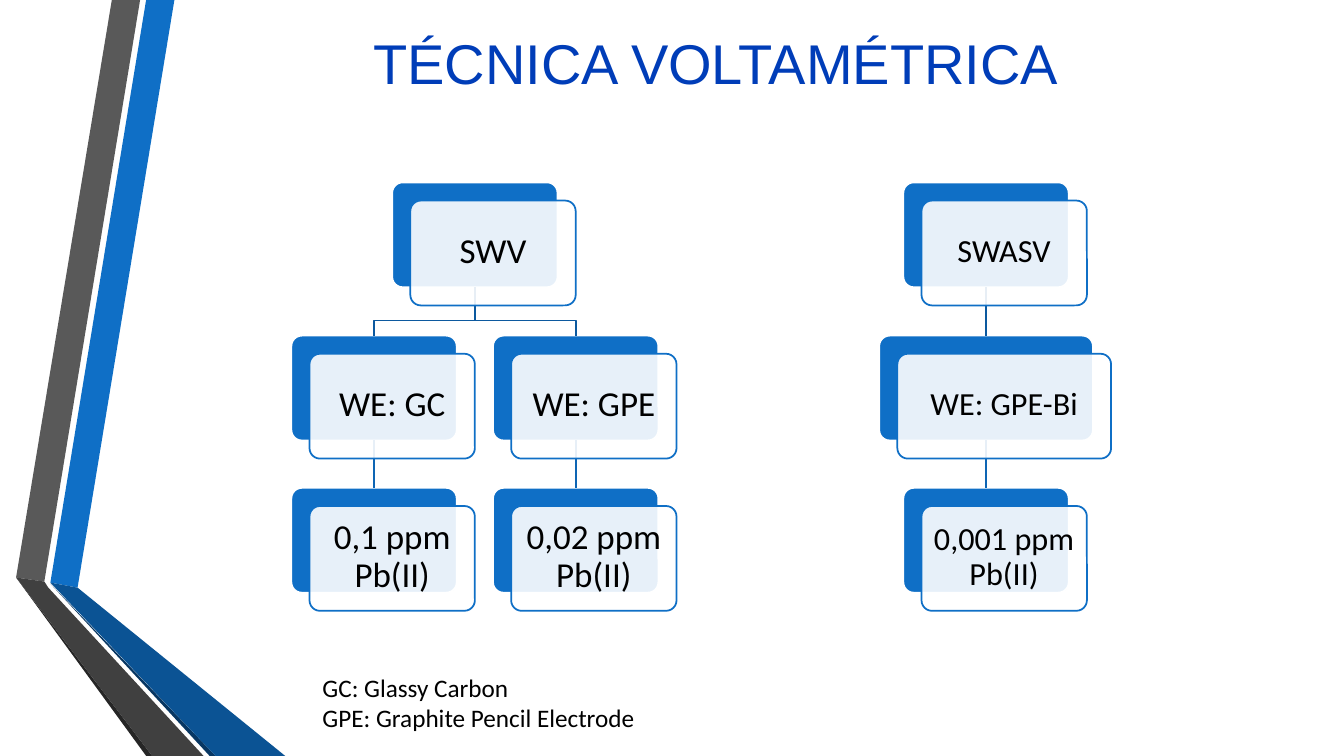
from dataclasses import dataclass
from typing import Any, NamedTuple, Optional

from lxml import etree
from pptx import Presentation
from pptx import util as u
from pptx.dml import color as dml
from pptx.enum import shapes, text
from pptx.oxml import ns

Point = tuple[float, float]


@dataclass(frozen=True)
class Theme:
    blue: str = "0F6FC6"
    title_blue: str = "003DB8"
    upper_link: str = "0C599F"
    lower_link: str = "0E65B4"
    white: str = "FFFFFF"
    black: str = "000000"
    title_font: str = "Arial"
    body_font: str = "Calibri"
    title_size: int = 40
    left_tree_size: int = 25
    right_tree_size: int = 23
    legend_size: int = 18
    line_width: float = 1.25


class Ribbon(NamedTuple):
    color: str
    outline: list[Point]


class Card(NamedTuple):
    label: str
    center: float
    row: int
    size: int
    parent: Optional[str] = None
    width: float = 1.64


THEME = Theme()
ROW_TOPS = (1.81, 3.33, 4.84)
CARD_HEIGHT = 1.04
FRONT_OFFSET = 0.18
BEND_Y = 3.18

RIBBONS = [
    Ribbon(THEME.blue, [(0.5, 5.78), (0.77, 5.83), (1.73, 0), (1.45, 0)]),
    Ribbon("595959", [(1.39, 0), (1.11, 0), (0.16, 5.73), (0.44, 5.77)]),
    Ribbon("262626", [(0.16, 5.73), (1.45, 7.5), (1.51, 7.5)]),
    Ribbon("083763", [(0.5, 5.79), (2.08, 7.5), (2.14, 7.5)]),
    Ribbon("0B5394", [(0.5, 5.78), (2.14, 7.5), (2.83, 7.5), (0.77, 5.83)]),
    Ribbon("404040", [(2.02, 7.5), (0.48, 5.83), (0.44, 5.77), (0.16, 5.73), (1.51, 7.5)]),
]

LEFT, RIGHT = THEME.left_tree_size, THEME.right_tree_size
CARDS = [
    Card("SWV", 4.71, 0, LEFT),
    Card("WE: GC", 3.71, 1, LEFT, "SWV"),
    Card("0,1 ppm Pb(II)", 3.71, 2, LEFT, "WE: GC"),
    Card("WE: GPE", 5.71, 1, LEFT, "SWV"),
    Card("0,02 ppm Pb(II)", 5.71, 2, LEFT, "WE: GPE"),
    Card("SWASV", 9.78, 0, RIGHT),
    Card("WE: GPE-Bi", 9.78, 1, RIGHT, "SWASV", 2.12),
    Card("0,001 ppm Pb(II)", 9.78, 2, RIGHT, "WE: GPE-Bi"),
]

# The rounded corners add their own small inset to these margins
CARD_FRAME = {
    "word_wrap": True,
    "vertical_anchor": text.MSO_ANCHOR.MIDDLE,
    "margin_left": u.Inches(0.09),
    "margin_right": u.Inches(0.09),
    "margin_top": u.Inches(0.08),
    "margin_bottom": u.Inches(0.1),
}
TITLE_FRAME = {"word_wrap": True, "vertical_anchor": text.MSO_ANCHOR.MIDDLE}
LEGEND_FRAME = {"word_wrap": False, "auto_size": text.MSO_AUTO_SIZE.SHAPE_TO_FIT_TEXT}
CENTERED = {"alignment": text.PP_ALIGN.CENTER}
CARD_PARAGRAPH = {**CENTERED, "line_spacing": 0.9}


def rgb(value: str) -> dml.RGBColor:
    return dml.RGBColor.from_string(value)


def apply(target: Any, values: dict[str, Any]) -> None:
    for name, value in values.items():
        setattr(target, name, value)


def set_line(line: Any, color: str) -> None:
    line.color.rgb = rgb(color)
    line.width = u.Pt(THEME.line_width)


def write(shape: Any, lines: list[str], frame_values: dict[str, Any],
          paragraph_values: dict[str, Any], font: str, size: int, color: str) -> None:
    frame = shape.text_frame
    apply(frame, frame_values)
    frame.text = "\n".join(lines)
    for paragraph in frame.paragraphs:
        apply(paragraph, paragraph_values)
        for run in paragraph.runs:
            apply(run.font, {"name": font, "size": u.Pt(size)})
            run.font.color.rgb = rgb(color)


def draw_outline(slide: Any, points: list[Point], close: bool) -> Any:
    corners = [(u.Inches(x), u.Inches(y)) for x, y in points]
    builder = slide.shapes.build_freeform(*corners[0])
    builder.add_line_segments(corners[1:], close=close)
    outline = builder.convert_to_shape()
    outline.shadow.inherit = False
    return outline


def draw_ribbon(slide: Any, ribbon: Ribbon) -> None:
    band = draw_outline(slide, ribbon.outline, close=True)
    band.fill.solid()
    band.fill.fore_color.rgb = rgb(ribbon.color)
    band.line.fill.background()


def draw_panel(slide: Any, card: Card, offset: float, fill: str, line: str) -> Any:
    panel = slide.shapes.add_shape(
        shapes.MSO_SHAPE.ROUNDED_RECTANGLE,
        u.Inches(card.center - card.width / 2 + offset),
        u.Inches(ROW_TOPS[card.row] + offset),
        u.Inches(card.width), u.Inches(CARD_HEIGHT))
    panel.adjustments[0] = 0.1
    panel.shadow.inherit = False
    panel.fill.solid()
    panel.fill.fore_color.rgb = rgb(fill)
    set_line(panel.line, line)
    return panel


def draw_link(slide: Any, parent: Card, child: Card, plates: dict[str, Any]) -> None:
    color = THEME.upper_link if child.row == 1 else THEME.lower_link
    start = (parent.center, ROW_TOPS[parent.row] + CARD_HEIGHT)
    end = (child.center, ROW_TOPS[child.row])
    if parent.center == child.center:
        link = slide.shapes.add_connector(
            shapes.MSO_CONNECTOR.STRAIGHT, *(u.Inches(v) for v in start + end))
        link.begin_connect(plates[parent.label], 2)
        link.end_connect(plates[child.label], 0)
        etree.SubElement(link._element.spPr, ns.qn("a:effectLst"))
    else:
        bend = [(parent.center, BEND_Y), (child.center, BEND_Y)]
        link = draw_outline(slide, [start, *bend, end], close=False)
        link.fill.background()
    set_line(link.line, color)


def draw_front(slide: Any, card: Card) -> None:
    front = draw_panel(slide, card, FRONT_OFFSET, THEME.white, THEME.blue)
    tint = front._element.spPr.find(ns.qn("a:solidFill"))[0]
    etree.SubElement(tint, ns.qn("a:alpha"), val="90000")
    write(front, [card.label], CARD_FRAME, CARD_PARAGRAPH,
          THEME.body_font, card.size, THEME.black)


def main() -> None:
    deck = Presentation()
    deck.slide_width, deck.slide_height = u.Inches(13.33), u.Inches(7.5)
    slide = deck.slides.add_slide(deck.slide_layouts[6])

    # Folded ribbons on the left edge
    for ribbon in RIBBONS:
        draw_ribbon(slide, ribbon)

    # Title
    title = slide.shapes.add_textbox(
        u.Inches(1.62), u.Inches(0), u.Inches(10.96), u.Inches(1.24))
    write(title, ["TÉCNICA VOLTAMÉTRICA"], TITLE_FRAME, CENTERED,
          THEME.title_font, THEME.title_size, THEME.title_blue)

    # Technique trees: plates, then links, then the translucent fronts
    by_label = {card.label: card for card in CARDS}
    plates = {card.label: draw_panel(slide, card, 0, THEME.blue, THEME.white)
              for card in CARDS}
    for card in CARDS:
        if card.parent:
            draw_link(slide, by_label[card.parent], card, plates)
    for card in CARDS:
        draw_front(slide, card)

    # Legend of abbreviations
    legend = slide.shapes.add_textbox(
        u.Inches(3.1), u.Inches(6.62), u.Inches(3.4), u.Inches(0.71))
    write(legend, ["GC: Glassy Carbon", "GPE: Graphite Pencil Electrode"], LEGEND_FRAME, {},
          THEME.body_font, THEME.legend_size, THEME.black)

    deck.save("out.pptx")


if __name__ == "__main__":
    main()
